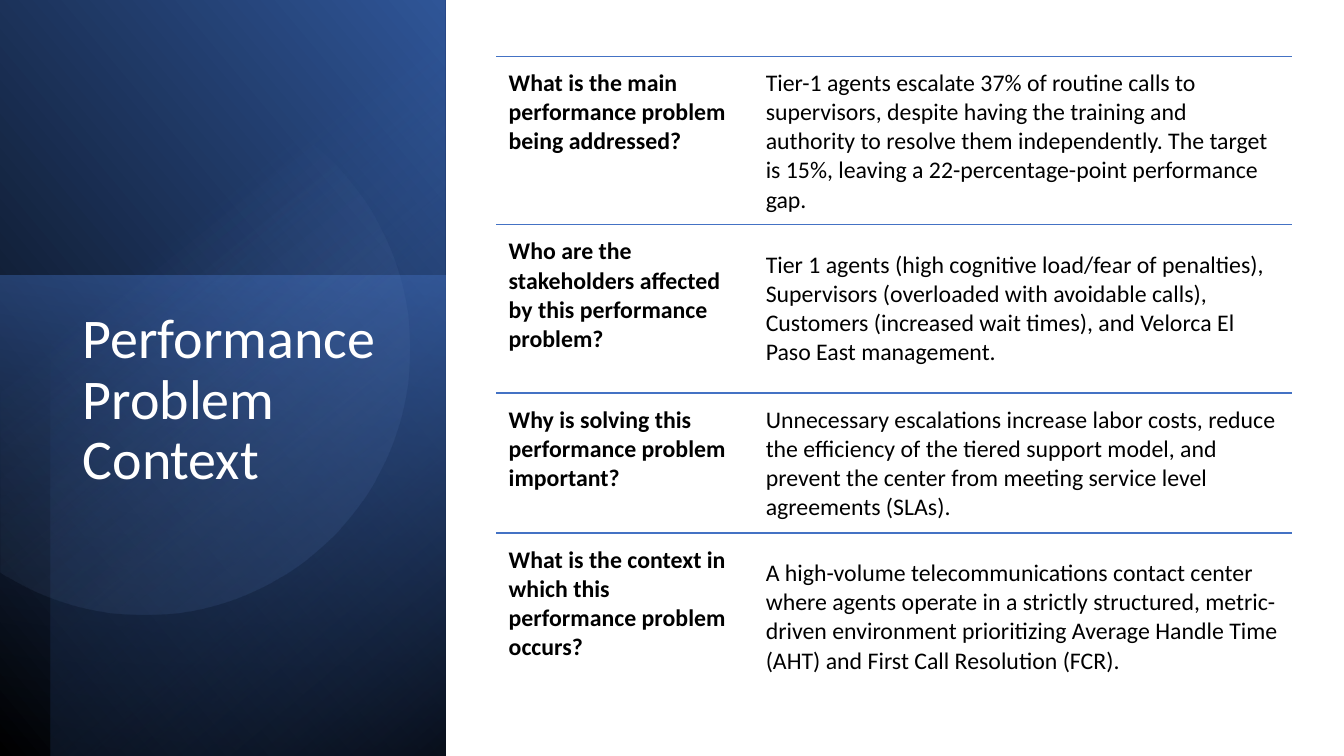
from math import acos, cos, pi, radians, sin, tan

from pptx import Presentation
from pptx.dml.color import RGBColor
from pptx.enum.shapes import MSO_SHAPE as Preset
from pptx.enum.text import MSO_ANCHOR as Anchor
from pptx.oxml import parse_xml
from pptx.oxml.ns import nsdecls
from pptx.util import Pt

TITLE = "Performance Problem Context"
QUESTIONS = [
    ("What is the main performance problem being addressed?",
     "Tier-1 agents escalate 37% of routine calls to supervisors, despite having "
     "the training and authority to resolve them independently. The target is 15%, "
     "leaving a 22-percentage-point performance gap."),
    ("Who are the stakeholders affected by this performance problem?",
     "Tier 1 agents (high cognitive load/fear of penalties), Supervisors (overloaded "
     "with avoidable calls), Customers (increased wait times), and Velorca El Paso "
     "East management."),
    ("Why is solving this performance problem important?",
     "Unnecessary escalations increase labor costs, reduce the efficiency of the "
     "tiered support model, and prevent the center from meeting service level "
     "agreements (SLAs)."),
    ("What is the context in which this performance problem occurs?",
     "A high-volume telecommunications contact center where agents operate in a "
     "strictly structured, metric-driven environment prioritizing Average Handle "
     "Time (AHT) and First Call Resolution (FCR)."),
]

THEME = {
    "font": "Calibri", "title_size": 40, "table_size": 17,
    "white": "FFFFFF", "black": "000000", "rule": "4472C4",
    "deep": "2F5597", "navy": "203864", "pale": "8FAADC",
}

WIDTH, HEIGHT = 960, 540
PANEL_WIDTH = 318
# Box as it shows, quarter turn, mirrored, stops (position, colour, opacity), angle
PANEL_LAYERS = [
    ((0, 0, PANEL_WIDTH, 541.4), 90, True,
     [(0, "black", 100), (100, "deep", 100)], 310),
    ((0, 196.6, PANEL_WIDTH, 342.7), 270, False,
     [(0, "rule", 50), (100, "navy", 0)], 190),
    ((36, 0, PANEL_WIDTH - 36, HEIGHT), 270, True,
     [(0, "black", 59), (69, "rule", 0)], 220),
]
DISC = {"center": (102.8, 249.9), "radius": 189.4, "pivot": (130.3, 255.2), "turn": 101.6}
DISC_STOPS, DISC_ANGLE = [(39, "pale", 0), (100, "deep", 26)], 310

TITLE_BOX = (52, 218.2, 226.8, 241.9)
TABLE_ORIGIN = (354.4, 40.3)
COLUMNS = (183.6, 385.2)
ROWS = (120.2, 120.2, 100.1, 120.2)
CELL_INSET = 9


def points(values):
    return [Pt(value) for value in values]


def apply(target, values):
    for name, value in values.items():
        setattr(target, name, value)


def write(frame, text, size, colour, bold=False):
    paragraph = frame.paragraphs[0]
    run = paragraph.add_run()
    run.text = text
    apply(run.font, {"name": THEME["font"], "size": Pt(size), "bold": bold})
    run.font.color.rgb = RGBColor.from_string(colour)
    return paragraph


def paint(shape, stops, angle):
    """Give a borderless shape a linear gradient with opacity at each stop."""
    shape.shadow.inherit = False
    shape.line.fill.background()
    shape.fill.background()
    stop_xml = "".join(
        f'<a:gs pos="{position * 1000}"><a:srgbClr val="{THEME[colour]}">'
        f'<a:alpha val="{opacity * 1000}"/></a:srgbClr></a:gs>'
        for position, colour, opacity in stops)
    gradient = parse_xml(
        f'<a:gradFill {nsdecls("a")} rotWithShape="1"><a:gsLst>{stop_xml}</a:gsLst>'
        f'<a:lin ang="{angle * 60000}" scaled="0"/></a:gradFill>')
    properties = shape.element.spPr
    properties.replace(properties.find("{*}noFill"), gradient)


def add_panel_layer(slide, box, turn, mirrored, stops, angle):
    """Place a quarter-turned rectangle so that it covers the visible box."""
    left, top, width, height = box
    shift = (width - height) / 2
    shape = slide.shapes.add_shape(
        Preset.RECTANGLE, *points((left + shift, top - shift, height, width)))
    shape.rotation = turn
    if mirrored:
        shape.element.spPr.xfrm.set("flipH", "1")
    paint(shape, stops, angle)


def bend(shape, center, radius, angles):
    """Turn the straight segments of a freeform into arcs around the center."""
    origin_x, origin_y = center[0] - shape.left, center[1] - shape.top
    segments = list(shape.element.spPr.iter("{*}lnTo"))
    for segment, start, end in zip(segments, angles, angles[1:]):
        reach = 4 / 3 * tan((end - start) / 4)
        controls = [(cos(start) - reach * sin(start), sin(start) + reach * cos(start)),
                    (cos(end) + reach * sin(end), sin(end) - reach * cos(end)),
                    (cos(end), sin(end))]
        curve = "".join(
            f'<a:pt x="{round(origin_x + radius * x)}" y="{round(origin_y + radius * y)}"/>'
            for x, y in controls)
        segment.getparent().replace(segment, parse_xml(
            f'<a:cubicBezTo {nsdecls("a")}>{curve}</a:cubicBezTo>'))


def add_disc(slide):
    """Draw the disc cut off by the slide's left edge, in its unrotated frame."""
    (center_x, center_y), radius = DISC["center"], Pt(DISC["radius"])
    pivot_x, pivot_y = DISC["pivot"]
    turn = radians(-DISC["turn"])
    x, y = center_x - pivot_x, center_y - pivot_y
    center = points((pivot_x + x * cos(turn) - y * sin(turn),
                     pivot_y + x * sin(turn) + y * cos(turn)))
    reach = pi - acos(center_x / DISC["radius"])
    angles = [turn - reach, -pi, -pi / 2, 0, turn + reach]
    outline = [(round(center[0] + radius * cos(angle)), round(center[1] + radius * sin(angle)))
               for angle in angles]
    builder = slide.shapes.build_freeform(*outline[0])
    builder.add_line_segments(outline[1:], close=True)
    shape = builder.convert_to_shape()
    bend(shape, center, radius, angles)
    shape.rotation = DISC["turn"]
    paint(shape, DISC_STOPS, DISC_ANGLE)


def add_title(slide):
    frame = slide.shapes.add_textbox(*points(TITLE_BOX)).text_frame
    apply(frame, {"word_wrap": True, "vertical_anchor": Anchor.TOP})
    write(frame, TITLE, THEME["title_size"], THEME["white"]).line_spacing = 0.9


def set_borders(cell, ruled_sides):
    properties = cell._tc.get_or_add_tcPr()
    for side in "LRTB":
        fill = (f'<a:solidFill><a:srgbClr val="{THEME["rule"]}"/></a:solidFill>'
                if side in ruled_sides else "<a:noFill/>")
        properties.append(parse_xml(
            f'<a:ln{side} {nsdecls("a")} w="{Pt(1)}">{fill}</a:ln{side}>'))


def add_question_table(slide):
    table = slide.shapes.add_table(
        len(ROWS), len(COLUMNS),
        *points((*TABLE_ORIGIN, sum(COLUMNS), sum(ROWS)))).table
    apply(table, {"first_row": False, "horz_banding": False})
    for column, width in zip(table.columns, COLUMNS):
        column.width = Pt(width)
    margins = {f"margin_{side}": Pt(CELL_INSET)
               for side in ("left", "right", "top", "bottom")}
    for row_index, (texts, height) in enumerate(zip(QUESTIONS, ROWS)):
        table.rows[row_index].height = Pt(height)
        ruled_sides = "T" if row_index == len(ROWS) - 1 else "TB"
        for column_index, text in enumerate(texts):
            is_question = column_index == 0
            cell = table.cell(row_index, column_index)
            anchor = Anchor.TOP if is_question else Anchor.MIDDLE
            apply(cell, {**margins, "vertical_anchor": anchor})
            set_borders(cell, ruled_sides)
            cell.fill.background()
            write(cell.text_frame, text, THEME["table_size"], THEME["black"], is_question)


def main():
    presentation = Presentation()
    apply(presentation, {"slide_width": Pt(WIDTH), "slide_height": Pt(HEIGHT)})
    slide = presentation.slides.add_slide(presentation.slide_layouts[6])
    for layer in PANEL_LAYERS:
        add_panel_layer(slide, *layer)
    add_disc(slide)
    add_title(slide)
    add_question_table(slide)
    presentation.save("out.pptx")


if __name__ == "__main__":
    main()
